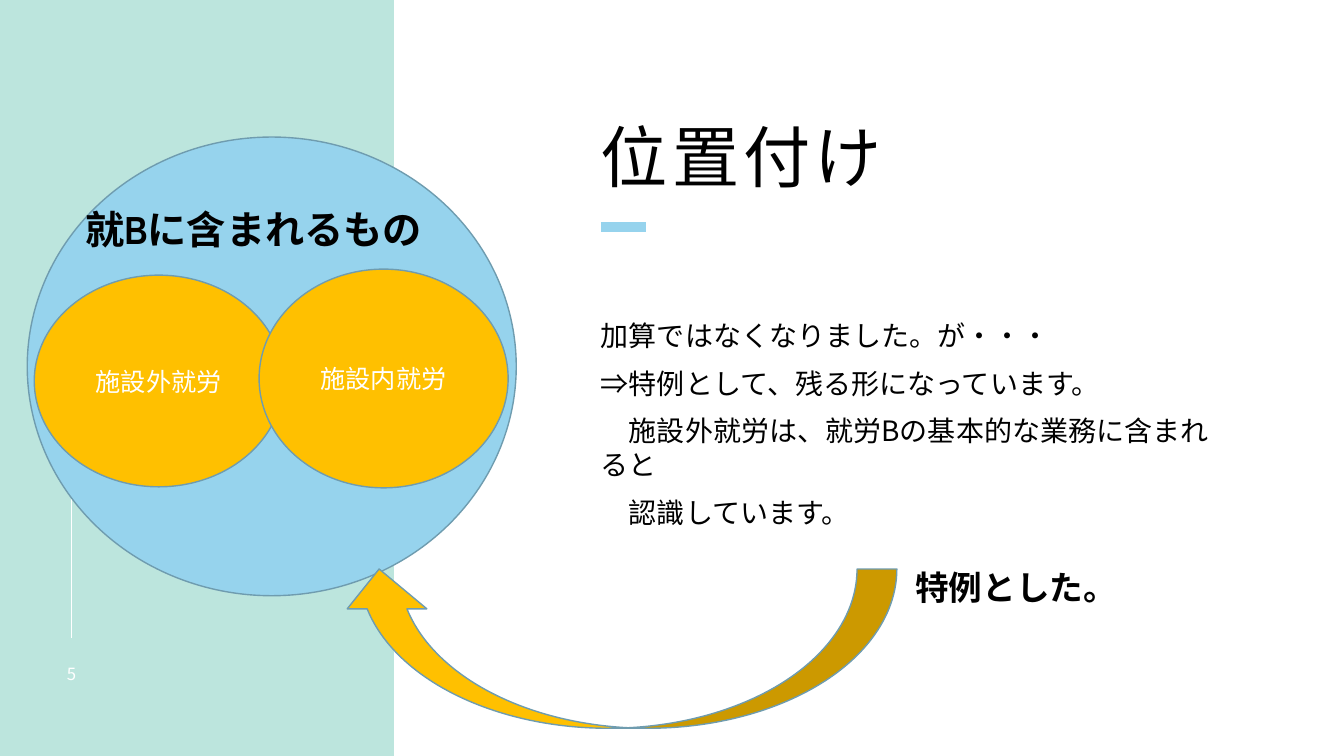
"""Build the slide on how off-site work is positioned within type B support."""
from lxml.etree import SubElement
from pptx import Presentation
from pptx.dml.color import RGBColor
from pptx.enum.shapes import MSO_CONNECTOR, MSO_SHAPE
from pptx.enum.text import MSO_ANCHOR, PP_ALIGN
from pptx.oxml.ns import qn
from pptx.util import Inches, Pt

MINT = RGBColor(0xBC, 0xE5, 0xDD)
SKY = RGBColor(0x96, 0xD3, 0xED)
STEEL = RGBColor(0x6F, 0x9C, 0xAF)
AMBER = RGBColor(0xFF, 0xC0, 0x00)
WHITE = RGBColor(0xFF, 0xFF, 0xFF)
BLACK = RGBColor(0x00, 0x00, 0x00)
SANS, NARROW = "Noto Sans CJK JP", "Arial Narrow"

WIDTH, HEIGHT = 13.33, 7.5
PANEL_LEFT = 3.91
TEXT_LEFT = 5.96
RULE_X = 0.71
ACCENT_Y = 2.25

HEADING = "位置付け"
EXPLANATION = [
    "加算ではなくなりました。が・・・",
    "⇒特例として、残る形になっています。",
    "\u3000施設外就労は、就労Bの基本的な業務に含まれると".replace("\u3000", "　"),
    "　認識しています。",
]
PAGE_NUMBER = "5"
RULES = [
    ((RULE_X, 2.94), (RULE_X, 6.33), WHITE, 1),
    ((TEXT_LEFT, ACCENT_Y), (TEXT_LEFT + 0.45, ACCENT_Y), SKY, 7),
]
CIRCLES = [
    ("", (0.27, 1.36, 4.85, 4.55), SKY),
    ("施設外就労", (0.34, 2.73, 2.47, 2.1), AMBER),
    ("施設内就労", (2.57, 2.67, 2.47, 2.17), AMBER),
]
CAPTIONS = [
    ("就Bに含まれるもの", (0.75, 1.99, 3.94, 0.57), 28),
    ("特例とした。", (8.98, 5.58, 2.42, 0.5), 24),
]
ARROW = (5.34, 3.67, 1.58, 5.53)


def box(place):
    return [Inches(length) for length in place]


def write(paragraph, words, size, face, color, bold=False, spacing=0):
    run = paragraph.add_run()
    run.text = words
    run.font.size = Pt(size)
    run.font.name = face
    run.font.bold = bold
    run.font.color.rgb = color
    properties = run.font._element
    SubElement(properties, qn("a:ea")).set("typeface", face)
    if spacing:
        properties.set("spc", str(spacing * 100))


def add_figure(slide, kind, place, fill, outline=STEEL):
    figure = slide.shapes.add_shape(kind, *box(place))
    figure.shadow.inherit = False
    figure.fill.solid()
    figure.fill.fore_color.rgb = fill
    if outline is None:
        figure.line.fill.background()
    else:
        figure.line.color.rgb = outline
        figure.line.width = Pt(1)
    return figure


def add_rule(slide, start, end, color, weight):
    rule = slide.shapes.add_connector(MSO_CONNECTOR.STRAIGHT, *box(start + end))
    rule.line.color.rgb = color
    rule.line.width = Pt(weight)
    SubElement(rule._element.spPr, qn("a:effectLst"))


def open_frame(holder, anchor=MSO_ANCHOR.TOP):
    frame = holder.text_frame
    frame.word_wrap = True
    frame.vertical_anchor = anchor
    frame.margin_left = frame.margin_top = 0
    frame.margin_right = frame.margin_bottom = 0
    return frame


def place_holder(holder, place):
    holder.left, holder.top, holder.width, holder.height = box(place)
    return open_frame(holder)


def main():
    deck = Presentation()
    deck.slide_width, deck.slide_height = Inches(WIDTH), Inches(HEIGHT)
    slide = deck.slides.add_slide(deck.slide_layouts[1])
    slide.background.fill.solid()
    slide.background.fill.fore_color.rgb = MINT

    panel = add_figure(slide, MSO_SHAPE.RECTANGLE,
                       (PANEL_LEFT, 0, WIDTH - PANEL_LEFT, HEIGHT), WHITE, None)
    slide.shapes._spTree.insert(2, panel._element)
    for rule in RULES:
        add_rule(slide, *rule)

    heading = place_holder(slide.shapes.title, (TEXT_LEFT, 1.23, 6.3, 0.6)).paragraphs[0]
    heading.alignment = PP_ALIGN.LEFT
    heading.line_spacing = 0.9
    write(heading, HEADING, 48, SANS, BLACK, spacing=3)

    explanation = place_holder(slide.placeholders[1], (TEXT_LEFT, 3.16, 6.04, 3.63))
    for index, sentence in enumerate(EXPLANATION):
        line = explanation.add_paragraph() if index else explanation.paragraphs[0]
        line.line_spacing = Pt(24)
        line.space_before = Pt(10)
        properties = line._p.get_or_add_pPr()
        properties.set("marL", "0")
        properties.set("indent", "0")
        SubElement(properties, qn("a:buNone"))
        write(line, sentence, 20, SANS, BLACK)

    page = slide.shapes.add_textbox(*box((0.46, 6.58, 0.5, 0.2)))
    number = open_frame(page, MSO_ANCHOR.MIDDLE).paragraphs[0]
    number.alignment = PP_ALIGN.CENTER
    write(number, PAGE_NUMBER, 12, SANS, WHITE, spacing=2)

    for label, place, fill in CIRCLES:
        circle = add_figure(slide, MSO_SHAPE.OVAL, place, fill)
        if label:
            circle.text_frame.vertical_anchor = MSO_ANCHOR.MIDDLE
            name = circle.text_frame.paragraphs[0]
            name.alignment = PP_ALIGN.CENTER
            write(name, label, 18, NARROW, WHITE)

    add_figure(slide, MSO_SHAPE.CURVED_LEFT_ARROW, ARROW, AMBER).rotation = 90

    for caption, place, size in CAPTIONS:
        note = slide.shapes.add_textbox(*box(place)).text_frame
        note.word_wrap = True
        write(note.paragraphs[0], caption, size, NARROW, BLACK, bold=True)

    deck.save("out.pptx")


if __name__ == "__main__":
    main()
